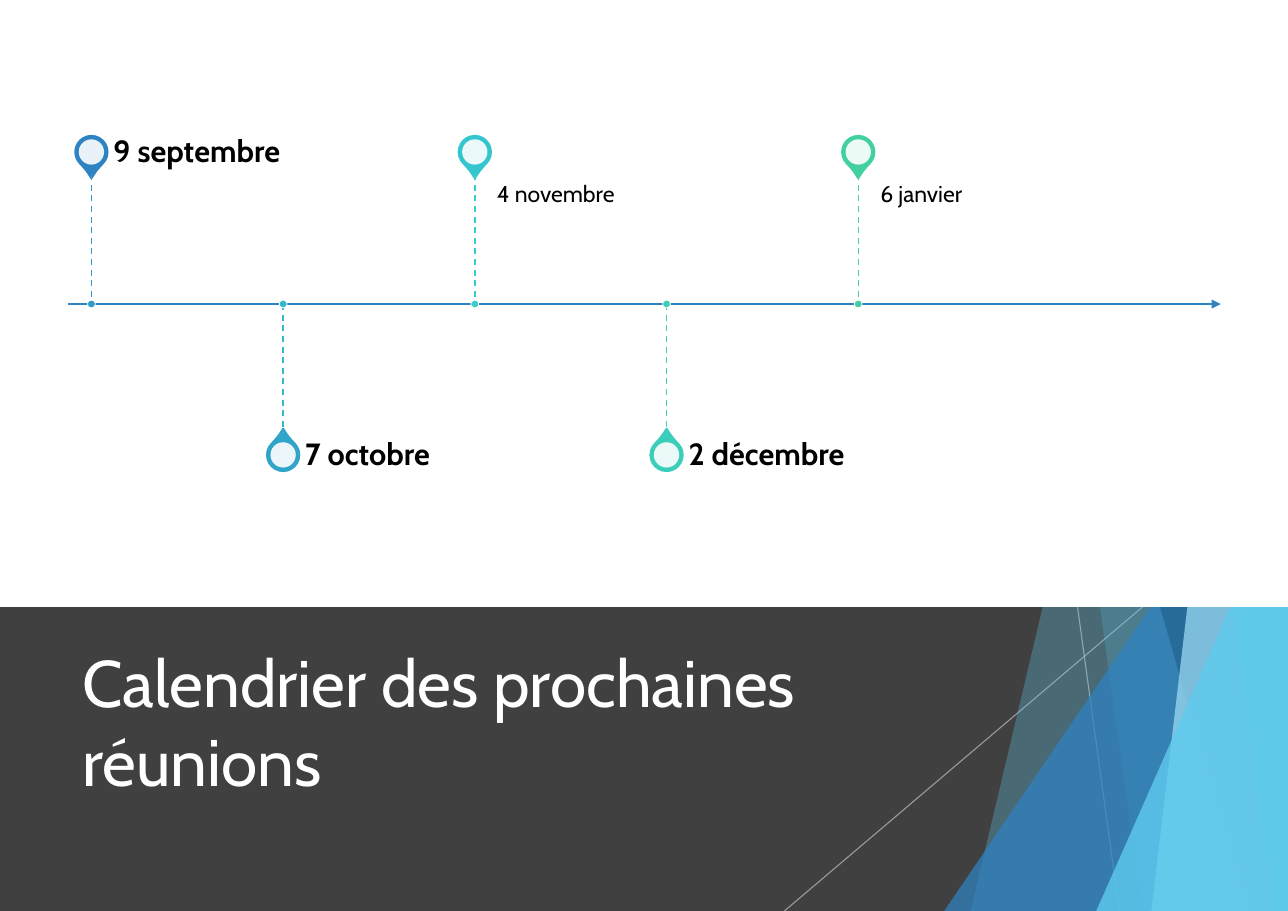
import pptx
import pptx.dml.color
import pptx.enum.dml
import pptx.enum.shapes
import pptx.enum.text
import pptx.oxml.ns
import pptx.oxml.xmlchemy
import pptx.util
from lxml import etree
from pptx.util import Inches

WIDTH, HEIGHT = 11.69, 8.27
BAND_TOP = 5.51
FONT = "Cabin"
TITLE = "Calendrier des prochaines réunions"

# label, emphasised, pin colour, stem colour
MEETINGS = [
    ("9 septembre", True, "2E83C3", "309DC8"),
    ("7 octobre", True, "30A4C9", "31B9CD"),
    ("4 novembre", False, "34C6CE", "37CECB"),
    ("2 décembre", True, "3BCFBB", "3CCFB6"),
    ("6 janvier", False, "42D0A2", "42D0A2"),
]
FIRST_X, STEP_X = 0.83, 1.74
AXIS_Y, AXIS_START, AXIS_END = 2.76, 0.62, 11.08
AXIS_COLOR = "2E83C3"

RAYS = [((9.78, BAND_TOP), (10.16, HEIGHT)), ((10.37, BAND_TOP), (7.12, HEIGHT))]

# kind, then left edge at top and bottom (facet) or left and top (triangle), colour, opacity
FACETS = [
    ("facet", 10.77, 8.81, "5FCBEF", 30),
    ("facet", 9.21, 10.37, "5FCBEF", 20),
    ("triangle", 8.57, 3.67, "2E83C3", 72),
    ("facet", 8.95, 11.32, "226292", 70),
    ("facet", 11.43, 10.45, "9FE0F5", 70),
    ("facet", 10.49, 11.55, "5FCBEF", 65),
    ("triangle", 9.95, 4.33, "5FCBEF", 80),
]

SHAPES = pptx.enum.shapes.MSO_SHAPE
ANCHOR = pptx.enum.text.MSO_ANCHOR
qn = pptx.oxml.ns.qn


def rgb(color):
    return pptx.dml.color.RGBColor.from_string(color)


def set_opacity(shape, percent):
    """Apply opacity to the first colour of the shape's own formatting."""
    color = shape.element.find(".//" + qn("a:srgbClr"))
    etree.SubElement(color, qn("a:alpha")).set("val", str(percent * 1000))


def paint(shape, fill, opacity=100, line=None, weight=1):
    shape.shadow.inherit = False
    shape.fill.solid()
    shape.fill.fore_color.rgb = rgb(fill)
    if opacity < 100:
        set_opacity(shape, opacity)
    if line:
        shape.line.color.rgb = rgb(line)
        shape.line.width = pptx.util.Pt(weight)
    else:
        shape.line.fill.background()


def add_preset(page, kind, left, top, width, height, *style):
    shape = page.shapes.add_shape(
        kind, Inches(left), Inches(top), Inches(width), Inches(height))
    paint(shape, *style)
    return shape


def add_disc(page, x, y, size, *style):
    add_preset(page, SHAPES.OVAL, x - size / 2, y - size / 2, size, size, *style)


def add_line(page, start, end, color, weight):
    line = page.shapes.add_connector(
        pptx.enum.shapes.MSO_CONNECTOR.STRAIGHT,
        *(Inches(value) for value in start + end))
    line.line.color.rgb = rgb(color)
    line.line.width = pptx.util.Pt(weight)
    etree.SubElement(line.element.spPr, qn("a:effectLst"))
    return line


def add_text(page, text, left, top, width, height, size, color,
             bold=False, anchor=ANCHOR.MIDDLE, insets=None, spacing=None):
    box = page.shapes.add_textbox(
        Inches(left), Inches(top), Inches(width), Inches(height))
    frame = box.text_frame
    frame.word_wrap = True
    frame.vertical_anchor = anchor
    if insets:
        (frame.margin_left, frame.margin_top,
         frame.margin_right, frame.margin_bottom) = map(Inches, insets)
    para = frame.paragraphs[0]
    para.text = text
    para.line_spacing = spacing
    para.font.name = FONT
    para.font.size = pptx.util.Pt(size)
    para.font.bold = bold
    para.font.color.rgb = rgb(color)


def add_facet(page, kind, first, second, color, opacity):
    if kind == "triangle":
        shape = add_preset(page, SHAPES.ISOSCELES_TRIANGLE, first, second,
                           WIDTH - first, HEIGHT - second, color, opacity)
        shape.adjustments[0] = 1
        return
    corners = [(first, 0), (WIDTH, 0), (WIDTH, HEIGHT), (second, HEIGHT)]
    points = [(Inches(x), Inches(y)) for x, y in corners]
    builder = page.shapes.build_freeform(*points[0])
    builder.add_line_segments(points[1:], close=True)
    paint(builder.convert_to_shape(), color, opacity)


def add_axis(page):
    axis = add_line(page, (AXIS_START, AXIS_Y), (AXIS_END, AXIS_Y), AXIS_COLOR, 1.5)
    outline = axis.element.spPr.find(qn("a:ln"))
    etree.SubElement(outline, qn("a:tailEnd")).set("type", "triangle")


def add_meeting(page, index, label, emphasised, pin_color, stem_color):
    x = FIRST_X + index * STEP_X
    above = index % 2 == 0
    pin_y, stem_end = (1.38, 1.58) if above else (4.13, 3.93)

    pin = add_preset(page, SHAPES.TEAR, x - 0.145, pin_y - 0.145, 0.29, 0.29,
                     pin_color, 100, pin_color, 1.5)
    pin.adjustments[0] = 1.15
    pin.rotation = 135 if above else 315
    add_disc(page, x, pin_y, 0.23, "FFFFFF", 90)

    if emphasised:
        add_text(page, label, x + 0.2, pin_y - 0.2, 2.9, 0.41, 20, "000000",
                 bold=True, insets=(0, 0, 0.14, 0), spacing=0.9)
    else:
        add_text(page, label, x + 0.2, stem_end, 2.9, 1.17, 15, "000000",
                 anchor=ANCHOR.TOP, insets=(0, 0.1, 0.1, 0.16), spacing=0.9)

    top, bottom = sorted((stem_end, AXIS_Y))
    stem = add_line(page, (x, top), (x, bottom), stem_color, 1)
    stem.line.dash_style = pptx.enum.dml.MSO_LINE.DASH
    add_disc(page, x, AXIS_Y, 0.07, stem_color, 100, "FFFFFF", 0.5)


def main():
    deck = pptx.Presentation()
    deck.slide_width, deck.slide_height = Inches(WIDTH), Inches(HEIGHT)
    page = deck.slides.add_slide(deck.slide_layouts[6])

    add_preset(page, SHAPES.RECTANGLE, 0, BAND_TOP, WIDTH, HEIGHT - BAND_TOP, "404040")
    for start, end in RAYS:
        set_opacity(add_line(page, start, end, "BFBFBF", 0.75), 70)
    for facet in FACETS:
        add_facet(page, *facet)
    add_text(page, TITLE, 0.65, 5.75, 8.24, 1.59, 43, "FFFFFF")

    add_preset(page, SHAPES.RECTANGLE, 0, 0, WIDTH, BAND_TOP, "FFFFFF")
    add_axis(page)
    for index, meeting in enumerate(MEETINGS):
        add_meeting(page, index, *meeting)

    deck.save("out.pptx")


if __name__ == "__main__":
    main()
